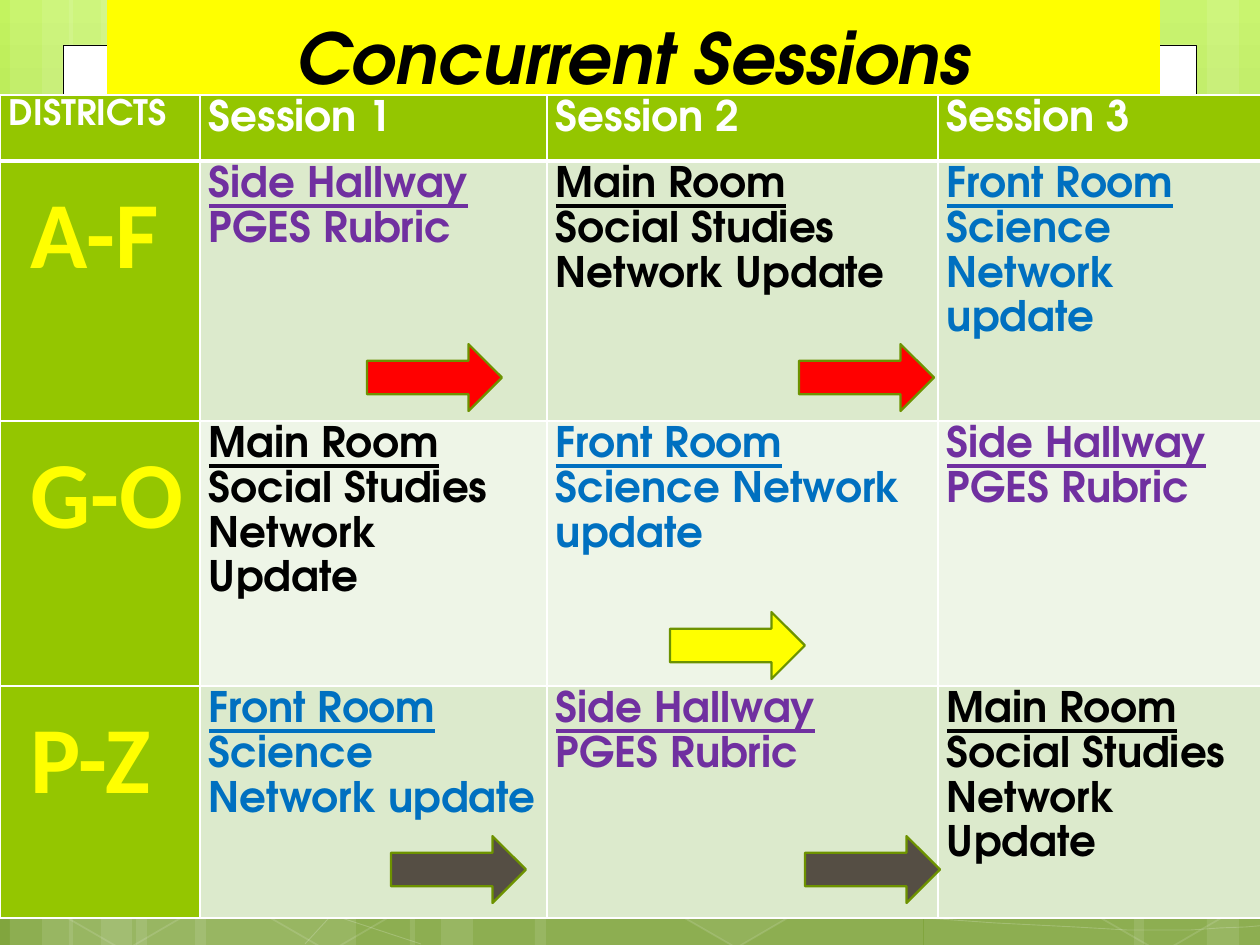
import copy
from dataclasses import dataclass

import pptx
import pptx.dml.color
import pptx.enum.shapes
import pptx.enum.text
import pptx.oxml
import pptx.oxml.ns
import pptx.util

RGB = pptx.dml.color.RGBColor
SHAPE = pptx.enum.shapes.MSO_SHAPE
ANCHOR = pptx.enum.text.MSO_ANCHOR
ALIGN = pptx.enum.text.PP_ALIGN
qn = pptx.oxml.ns.qn

EMU_PER_PX = 914400 / 126
WHITE = RGB(0xFF, 0xFF, 0xFF)
BLACK = RGB(0x00, 0x00, 0x00)
YELLOW = RGB(0xFF, 0xFF, 0x00)
RED = RGB(0xFF, 0x00, 0x00)
BROWN = RGB(0x55, 0x4E, 0x44)
GREEN = RGB(0x94, 0xC6, 0x00)
DARK_GREEN = RGB(0x6D, 0x92, 0x00)
PURPLE = RGB(0x70, 0x30, 0xA0)
BLUE = RGB(0x00, 0x70, 0xC0)
ROW_TINTS = [RGB(0xDC, 0xEA, 0xCC), RGB(0xEE, 0xF5, 0xE7)]
BACKDROP = [(0, RGB(0xC3, 0xF3, 0x5F)), (0.62, RGB(0x93, 0xBF, 0x3F)), (1, RGB(0x81, 0xA5, 0x3E))]
HEADING_FONT = "TeX Gyre Adventor"
DISTRICT_FONT = "Calibri"


@dataclass
class Box:
    x: int
    y: int
    w: int
    h: int


@dataclass
class Paint:
    fill: RGB | None = None
    line: RGB | None = None
    width: float = 1
    fill_alpha: int = 100
    line_alpha: int = 100


@dataclass
class Talk:
    room: str
    topic: str
    color: RGB


@dataclass
class Arrow:
    x: int
    y: int
    color: RGB


RUBRIC = Talk("Side Hallway", "PGES Rubric", PURPLE)
SOCIAL = Talk("Main Room", "Social Studies Network Update", BLACK)
SCIENCE = Talk("Front Room", "Science Network update", BLUE)
HEADERS = ["DISTRICTS", "Session 1", "Session 2", "Session 3"]
SCHEDULE = {
    "A-F": [RUBRIC, SOCIAL, SCIENCE],
    "G-O": [SOCIAL, SCIENCE, RUBRIC],
    "P-Z": [SCIENCE, RUBRIC, SOCIAL],
}
COLUMN_WIDTHS = [200, 347, 391, 342]
ROW_HEIGHTS = [66, 260, 265, 232]
ARROWS = [
    Arrow(367, 344, RED), Arrow(799, 344, RED), Arrow(670, 612, YELLOW),
    Arrow(391, 836, BROWN), Arrow(805, 836, BROWN),
]
BANDS = [
    (136, 220), (10, 63), (42, 105), (195, 220), (69, 63), (101, 105),
    (924, 220), (1207, 63), (1134, 105), (535, 388), (410, 63), (441, 105),
]
CURVES = [
    [(8, 777), (160, 847), (311, 916), (421, 944)],
    [(9, 728), (48, 742), (88, 756), (161, 776), (234, 795), (344, 827), (450, 848),
     (554, 869), (687, 892), (791, 905), (896, 919), (1008, 924), (1075, 927),
     (1140, 932), (1158, 930), (1191, 930), (1223, 929), (1246, 926), (1269, 925)],
    [(305, 944), (328, 919), (350, 893), (381, 871), (411, 848), (454, 823), (489, 805),
     (524, 787), (546, 780), (592, 767), (638, 755), (722, 737), (766, 728),
     (811, 719), (818, 719), (857, 717), (896, 713), (958, 709), (1000, 708),
     (1045, 707), (1116, 708), (1116, 708), (1200, 708), (1240, 710), (1268, 713)],
]
HEXAGONS = [(626, 742, 6), (14, 745, 0), (219, 746, 0), (1051, 747, 0)]


def px(length: float) -> int:
    return round(length * EMU_PER_PX)


def apply(target, values: dict) -> None:
    for name, value in values.items():
        setattr(target, name, value)


def fade(parent, alpha: int) -> None:
    if alpha < 100:
        color = parent.find(qn("a:solidFill")).find(qn("a:srgbClr"))
        color.append(pptx.oxml.parse_xml(
            f'<a:alpha {pptx.oxml.ns.nsdecls("a")} val="{alpha * 1000}"/>'))


def paint(shape, style: Paint) -> None:
    shape.shadow.inherit = False
    properties = shape.element.spPr
    if style.fill is None:
        shape.fill.background()
    else:
        shape.fill.solid()
        shape.fill.fore_color.rgb = style.fill
        fade(properties, style.fill_alpha)
    if style.line is None:
        shape.line.fill.background()
    else:
        shape.line.color.rgb = style.line
        shape.line.width = pptx.util.Pt(style.width)
        fade(properties.find(qn("a:ln")), style.line_alpha)


def draw_shape(slide, kind, box: Box, style: Paint):
    shape = slide.shapes.add_shape(kind, px(box.x), px(box.y), px(box.w), px(box.h))
    paint(shape, style)
    return shape


def curve_points(knots: list[tuple[int, int]], steps: int = 3) -> list[tuple[float, float]]:
    points = []
    for first in range(0, len(knots) - 1, 3):
        segment = knots[first:first + 4]
        for step in range(1, steps + 1):
            t = step / steps
            weights = [(1 - t) ** 3, 3 * t * (1 - t) ** 2, 3 * t * t * (1 - t), t ** 3]
            points.append(tuple(sum(w * knot[axis] for w, knot in zip(weights, segment))
                                for axis in (0, 1)))
    return points


def draw_curve(slide, knots: list[tuple[int, int]]) -> None:
    outline = slide.shapes.build_freeform(*knots[0], scale=EMU_PER_PX)
    outline.add_line_segments(curve_points(knots), close=False)
    paint(outline.convert_to_shape(), Paint(line=WHITE, width=0.5, line_alpha=20))


def draw_backdrop(slide) -> None:
    fill = slide.background.fill
    fill.gradient()
    fill.gradient_angle = 270
    stop_list = next(slide.element.iter(qn("a:gsLst")))
    stop_list.insert(1, copy.deepcopy(stop_list[0]))
    for stop, (position, color) in zip(fill.gradient_stops, BACKDROP):
        stop.position = position
        stop.color.rgb = color
    for x, width in BANDS:
        draw_shape(slide, SHAPE.RECTANGLE, Box(x, 0, width, 945), Paint(WHITE, fill_alpha=10))
    for knots in CURVES:
        draw_curve(slide, knots)
    for x, y, alpha in HEXAGONS:
        style = Paint(WHITE if alpha else None, WHITE, 1, alpha, 12)
        hexagon = draw_shape(slide, SHAPE.HEXAGON, Box(x, y, 220, 191), style)
        hexagon.rotation = 30
        hexagon.adjustments[0] = 0.285
    draw_shape(slide, SHAPE.RECTANGLE, Box(63, 45, 1134, 852), Paint(WHITE, BLACK, 0.5))


def write(paragraph, text: str, color: RGB, size: int, **extra) -> None:
    run = paragraph.add_run()
    run.text = text
    run.font.color.rgb = color
    apply(run.font, {"name": HEADING_FONT, "size": pptx.util.Pt(size), "bold": True, **extra})


def draw_title(slide) -> None:
    title = draw_shape(slide, SHAPE.RECTANGLE, Box(107, 0, 1053, 105), Paint(YELLOW))
    apply(title.text_frame, {"word_wrap": True, "vertical_anchor": ANCHOR.BOTTOM})
    heading = title.text_frame.paragraphs[0]
    heading.alignment = ALIGN.CENTER
    write(heading, "Concurrent Sessions", BLACK, 40, italic=True)


def format_cell(cell, fill: RGB, top: int = 1, bottom: int = 1) -> None:
    properties = cell._tc.get_or_add_tcPr()
    for side, width in {"L": 1, "R": 1, "T": top, "B": bottom}.items():
        properties.append(pptx.oxml.parse_xml(
            f'<a:ln{side} {pptx.oxml.ns.nsdecls("a")} w="{width * 12700}">'
            f'<a:solidFill><a:srgbClr val="{WHITE}"/></a:solidFill></a:ln{side}>'))
    cell.fill.solid()
    cell.fill.fore_color.rgb = fill
    apply(cell, {"margin_left": px(9), "margin_right": px(10), "margin_top": 0, "margin_bottom": 0})
    for paragraph in cell.text_frame.paragraphs:
        paragraph.line_spacing = 1.15


def draw_schedule(slide) -> None:
    table = slide.shapes.add_table(
        len(ROW_HEIGHTS), len(COLUMN_WIDTHS), 0, px(95),
        px(sum(COLUMN_WIDTHS)), px(sum(ROW_HEIGHTS))).table
    for column, width in zip(table.columns, COLUMN_WIDTHS):
        column.width = px(width)
    for row, height in zip(table.rows, ROW_HEIGHTS):
        row.height = px(height)
    for index, header in enumerate(HEADERS):
        cell = table.cell(0, index)
        write(cell.text_frame.paragraphs[0], header, WHITE, 24 if index else 20)
        format_cell(cell, GREEN, bottom=3)
    for row, (districts, talks) in enumerate(SCHEDULE.items(), 1):
        top = 3 if row == 1 else 1
        cell = table.cell(row, 0)
        write(cell.text_frame.paragraphs[0], f" {districts}", YELLOW, 54, name=DISTRICT_FONT)
        format_cell(cell, GREEN, top)
        for column, talk in enumerate(talks, 1):
            cell = table.cell(row, column)
            write(cell.text_frame.paragraphs[0], talk.room, talk.color, 24, underline=True)
            write(cell.text_frame.add_paragraph(), talk.topic, talk.color, 24)
            format_cell(cell, ROW_TINTS[(row - 1) % 2], top)


def main() -> None:
    deck = pptx.Presentation()
    apply(deck, {"slide_width": px(1260), "slide_height": px(945)})
    slide = deck.slides.add_slide(deck.slide_layouts[6])
    draw_backdrop(slide)
    draw_title(slide)
    draw_schedule(slide)
    for arrow in ARROWS:
        draw_shape(slide, SHAPE.RIGHT_ARROW, Box(arrow.x, arrow.y, 135, 67),
                   Paint(arrow.color, DARK_GREEN, 1.25))
    deck.save("out.pptx")


if __name__ == "__main__":
    main()
